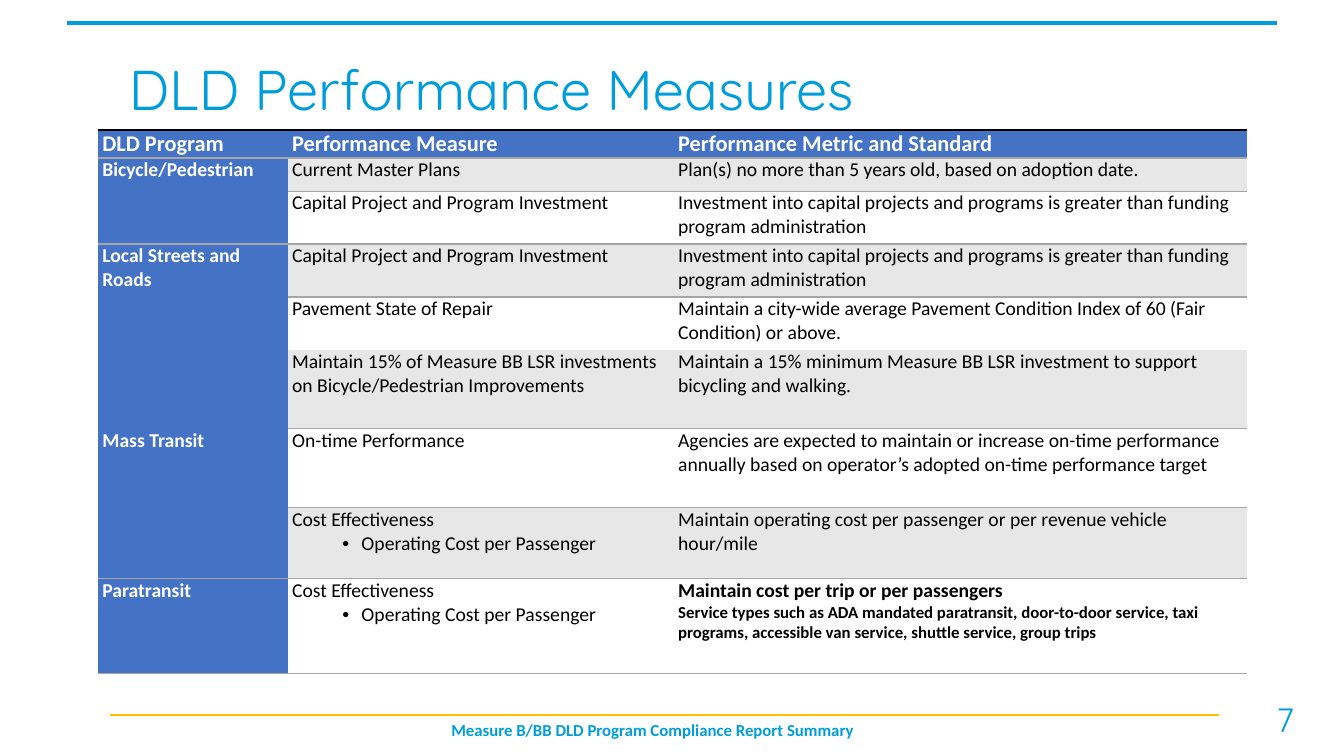
import pptx
import pptx.util
import pptx.dml.color
import pptx.enum.shapes
import pptx.enum.text
import pptx.oxml
import pptx.oxml.ns
from dataclasses import dataclass
from lxml import etree

Cm = pptx.util.Cm
Pt = pptx.util.Pt
ALIGN = pptx.enum.text.PP_ALIGN
ANCHOR = pptx.enum.text.MSO_ANCHOR
qn = pptx.oxml.ns.qn


@dataclass(frozen=True)
class Theme:
    sky: str = "009DDC"
    gold: str = "FFC000"
    blue: str = "4472C4"
    band: str = "E7E7E7"
    white: str = "FFFFFF"
    black: str = "000000"
    grey: str = "A6A6A6"
    heading: str = "Quicksand"
    body: str = "Calibri"
    title_size: float = 40
    number_size: float = 24
    header_size: float = 16
    cell_size: float = 14
    small_size: float = 12


@dataclass(frozen=True)
class Line:
    text: str
    size: float = 14
    bold: bool = False
    bullet: bool = False


T = Theme()
HEADERS = ("DLD Program", "Performance Measure", "Performance Metric and Standard")
INVEST = ("Capital Project and Program Investment",
          "Investment into capital projects and programs is greater than funding "
          "program administration")
COST = ("Cost Effectiveness", Line("Operating Cost per Passenger", bullet=True))
PROGRAMS = [
    (("Bicycle/Pedestrian",), [
        ("Current Master Plans",
         "Plan(s) no more than 5 years old, based on adoption date."),
        INVEST,
    ]),
    (("Local Streets and", "Roads"), [
        INVEST,
        ("Pavement State of Repair",
         "Maintain a city-wide average Pavement Condition Index of 60 (Fair Condition) or above."),
        ("Maintain 15% of Measure BB LSR investments on Bicycle/Pedestrian Improvements",
         "Maintain a 15% minimum Measure BB LSR investment to support bicycling and walking."),
    ]),
    (("Mass Transit",), [
        ("On-time Performance",
         "Agencies are expected to maintain or increase on-time performance annually "
         "based on operator’s adopted on-time performance target"),
        (COST, "Maintain operating cost per passenger or per revenue vehicle hour/mile"),
    ]),
    (("Paratransit",), [
        (COST, (Line("Maintain cost per trip or per passengers", bold=True),
                Line("Service types such as ADA mandated paratransit, door-to-door service, "
                     "taxi programs, accessible van service, shuttle service, group trips",
                     T.small_size, True))),
    ]),
]
COL_WIDTHS = (4.78, 9.73, 14.43)
ROW_HEIGHTS = (0.7, 0.84, 1.33, 1.33, 1.33, 1.99, 1.99, 1.79, 2.39)
RULES = (1.5, 1, 0.75, 1.5, 1.25, 0, 1, 0.75, 1.5, 1.5)


def rgb(color):
    return pptx.dml.color.RGBColor.from_string(color)


def style(p, font, size, color, bold=False):
    for r in p.runs:
        r.font.name = font
        r.font.size = Pt(size)
        r.font.bold = bold
        r.font.color.rgb = rgb(color)


def add_text(slide, box, text, font, size, color, bold=False,
             align=ALIGN.CENTER, anchor=ANCHOR.MIDDLE):
    tf = slide.shapes.add_textbox(*map(Cm, box)).text_frame
    tf.word_wrap = True
    tf.vertical_anchor = anchor
    tf.text = text
    p = tf.paragraphs[0]
    p.alignment = align
    style(p, font, size, color, bold)
    return p


def add_rule(slide, left, right, y, color, width):
    line = slide.shapes.add_connector(pptx.enum.shapes.MSO_CONNECTOR.STRAIGHT,
                                      Cm(left), Cm(y), Cm(right), Cm(y))
    line.line.color.rgb = rgb(color)
    line.line.width = Pt(width)
    etree.SubElement(line._element.spPr, qn("a:effectLst"))


def add_border(tc_pr, side, width, color=T.grey):
    ln = etree.SubElement(tc_pr, qn(f"a:ln{side}"))
    if not width:
        etree.SubElement(ln, qn("a:noFill"))
        return
    ln.set("w", str(Pt(width)))
    fill = etree.SubElement(ln, qn("a:solidFill"))
    etree.SubElement(fill, qn("a:srgbClr")).set("val", color)


def add_bullet(p):
    p_pr = p._p.get_or_add_pPr()
    p_pr.set("marL", str(Cm(1.75)))
    p_pr.set("indent", str(Cm(-0.48)))
    etree.SubElement(p_pr, qn("a:buFont")).set("typeface", "Arial")
    etree.SubElement(p_pr, qn("a:buChar")).set("char", "•")


def write_cell(cell, content, color):
    lines = (content,) if isinstance(content, (str, Line)) else content
    for i, line in enumerate(lines):
        line = Line(line) if isinstance(line, str) else line
        p = cell.text_frame.paragraphs[0] if i == 0 else cell.text_frame.add_paragraph()
        p.text = line.text
        if line.bullet:
            add_bullet(p)
        style(p, T.body, line.size, color, line.bold)


def format_cell(cell, fill, top, bottom, top_color=T.grey):
    cell.margin_left = cell.margin_right = Cm(0.1)
    cell.margin_top = cell.margin_bottom = 0
    tc_pr = cell._tc.get_or_add_tcPr()
    for side in "LR":
        add_border(tc_pr, side, 0)
    add_border(tc_pr, "T", top, top_color)
    add_border(tc_pr, "B", bottom)
    cell.fill.solid()
    cell.fill.fore_color.rgb = rgb(fill)


def add_measures(slide):
    table = slide.shapes.add_table(
        len(ROW_HEIGHTS), len(COL_WIDTHS), Cm(2.48), Cm(3.28),
        Cm(sum(COL_WIDTHS)), Cm(sum(ROW_HEIGHTS))).table
    table.first_row = table.horz_banding = False
    for col, width in zip(table.columns, COL_WIDTHS):
        col.width = Cm(width)
    for row, height in zip(table.rows, ROW_HEIGHTS):
        row.height = Cm(height)
    for c, header in enumerate(HEADERS):
        write_cell(table.cell(0, c), Line(header, T.header_size, True), T.white)
        format_cell(table.cell(0, c), T.blue, RULES[0], RULES[1], T.black)
    row = 1
    for program, measures in PROGRAMS:
        first, last = row, row + len(measures) - 1
        write_cell(table.cell(first, 0),
                   [Line(t, T.cell_size, True) for t in program], T.white)
        for measure in measures:
            format_cell(table.cell(row, 0), T.blue,
                        RULES[row] if row == first else 0,
                        RULES[row + 1] if row == last else 0)
            for c, content in enumerate(measure, 1):
                write_cell(table.cell(row, c), content, T.black)
                format_cell(table.cell(row, c), T.band if row % 2 else T.white,
                            RULES[row], RULES[row + 1])
            row += 1
        if last > first:
            table.cell(first, 0).merge(table.cell(last, 0))


def main():
    prs = pptx.Presentation()
    prs.slide_width, prs.slide_height = Cm(33.87), Cm(19.05)
    slide = prs.slides.add_slide(prs.slide_layouts[6])
    add_text(slide, (6.86, 18.01, 19.18, 0.97),
             "Measure B/BB DLD Program Compliance Report Summary",
             T.body, T.small_size, T.sky, True, anchor=ANCHOR.TOP)
    add_text(slide, (31.22, 17.48, 2.34, 1.27), "7", T.heading, T.number_size, T.sky)
    add_rule(slide, 2.77, 30.71, 18.01, T.gold, 1.5)
    add_rule(slide, 1.7, 32.18, 0.58, T.sky, 2.25)
    title = add_text(slide, (3, 0.48, 27.94, 3.68), "DLD Performance Measures",
                     T.heading, T.title_size, T.sky, align=ALIGN.LEFT)
    title.line_spacing = 0.9
    add_measures(slide)
    prs.save("out.pptx")


if __name__ == "__main__":
    main()
